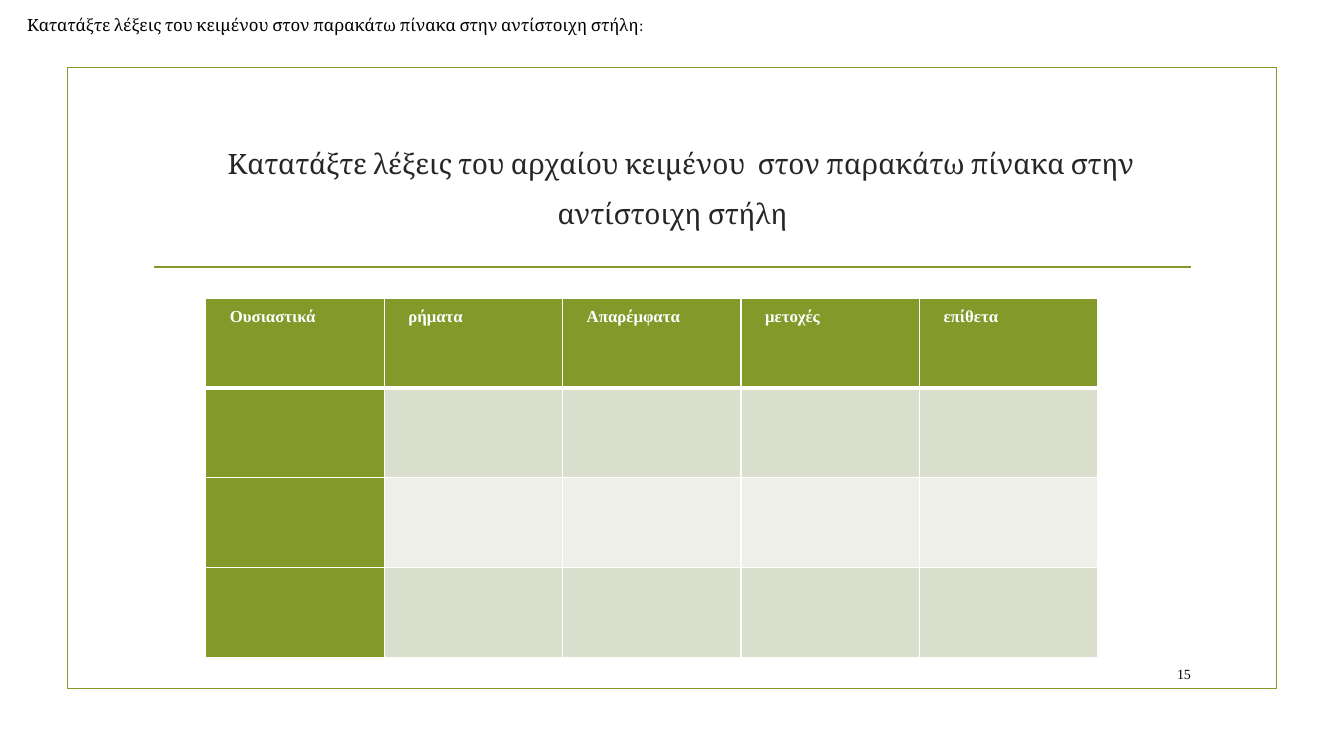
from lxml.etree import SubElement
from pptx import Presentation
from pptx.dml.color import RGBColor
from pptx.enum.shapes import MSO_CONNECTOR, MSO_SHAPE
from pptx.enum.text import MSO_ANCHOR, PP_ALIGN
from pptx.oxml.ns import qn
from pptx.util import Inches, Pt

TITLE = "Κατατάξτε λέξεις του αρχαίου κειμένου  στον παρακάτω πίνακα στην αντίστοιχη στήλη"
INSTRUCTION = "Κατατάξτε λέξεις του κειμένου στον παρακάτω πίνακα στην αντίστοιχη στήλη:"
HEADINGS = ["Ουσιαστικά", "ρήματα", "Απαρέμφατα ", "μετοχές", "επίθετα"]
SLIDE_NUMBER = "15"
ROW_COUNT = 4

OLIVE = RGBColor(0x83, 0x99, 0x2A)
BANDS = [RGBColor(0xED, 0xEF, 0xE8), RGBColor(0xD9, 0xDE, 0xCD)]
WHITE = RGBColor(0xFF, 0xFF, 0xFF)
BLACK = RGBColor(0, 0, 0)
CHARCOAL = RGBColor(0x26, 0x26, 0x26)

SLIDE_WIDTH, SLIDE_HEIGHT = 13.33, 7.5
MARGIN = 0.67
TABLE_LEFT, TABLE_TOP = 2.04, 2.96
COLUMN_WIDTH, ROW_HEIGHT = 1.77, 0.89
RULE_LEFT, RULE_RIGHT, RULE_TOP = 1.53, 11.81, 2.65


def write(frame, text, size, color, font="Cambria", align=PP_ALIGN.JUSTIFY,
          bold=False, indent=0.17, spacing=1.0, anchor=MSO_ANCHOR.MIDDLE):
    frame.word_wrap = True
    frame.vertical_anchor = anchor
    paragraph = frame.paragraphs[0]
    paragraph.alignment = align
    paragraph.line_spacing = spacing
    paragraph.space_before = Pt(0)
    properties = paragraph._p.get_or_add_pPr()
    properties.set("marL", "0")
    properties.set("indent", str(Inches(indent)))
    run = paragraph.add_run()
    run.text = text
    run.font.name = font
    run.font.size = Pt(size)
    run.font.bold = bold
    run.font.color.rgb = color


def add_border(cell, side, points):
    border = SubElement(cell._tc.get_or_add_tcPr(), qn(f"a:ln{side}"), w=str(Pt(points)))
    fill = SubElement(border, qn("a:solidFill"))
    SubElement(fill, qn("a:srgbClr"), val=str(WHITE))


def add_frame_and_rule(slide):
    frame = slide.shapes.add_shape(
        MSO_SHAPE.RECTANGLE, Inches(MARGIN), Inches(MARGIN),
        Inches(SLIDE_WIDTH - 2 * MARGIN), Inches(SLIDE_HEIGHT - 2 * MARGIN))
    frame.shadow.inherit = False
    frame.fill.background()
    rule = slide.shapes.add_connector(
        MSO_CONNECTOR.STRAIGHT, Inches(RULE_LEFT), Inches(RULE_TOP),
        Inches(RULE_RIGHT), Inches(RULE_TOP))
    SubElement(rule._element.spPr, qn("a:effectLst"))
    for shape in (frame, rule):
        shape.line.color.rgb = OLIVE
        shape.line.width = Pt(1.25)


def add_word_table(slide):
    table = slide.shapes.add_table(
        ROW_COUNT, len(HEADINGS), Inches(TABLE_LEFT), Inches(TABLE_TOP),
        Inches(COLUMN_WIDTH * len(HEADINGS)), Inches(ROW_HEIGHT * ROW_COUNT)).table
    table.first_col = True
    for column in table.columns:
        column.width = Inches(COLUMN_WIDTH)
    for row_index, row in enumerate(table.rows):
        row.height = Inches(ROW_HEIGHT)
        for column_index, cell in enumerate(row.cells):
            is_heading = row_index == 0
            cell.margin_left = cell.margin_right = Inches(0.07)
            cell.margin_top = cell.margin_bottom = 0
            add_border(cell, "L", 1)
            add_border(cell, "R", 1)
            add_border(cell, "T", 3 if row_index == 1 else 1)
            add_border(cell, "B", 3 if is_heading else 1)
            cell.fill.solid()
            on_edge = is_heading or column_index == 0
            cell.fill.fore_color.rgb = OLIVE if on_edge else BANDS[row_index % 2]
            if is_heading:
                write(cell.text_frame, HEADINGS[column_index], 12, WHITE,
                      font="Times New Roman", bold=True, spacing=1.5,
                      anchor=MSO_ANCHOR.TOP)


def add_text(slide, text, left, top, width, height, **style):
    box = slide.shapes.add_textbox(Inches(left), Inches(top), Inches(width), Inches(height))
    write(box.text_frame, text, **style)


def main():
    presentation = Presentation()
    presentation.slide_width = Inches(SLIDE_WIDTH)
    presentation.slide_height = Inches(SLIDE_HEIGHT)
    slide = presentation.slides.add_slide(presentation.slide_layouts[5])

    title = slide.shapes.title
    title.left, title.top = Inches(1.42), Inches(1.07)
    title.width, title.height = Inches(10.5), Inches(1.43)
    write(title.text_frame, TITLE, 20, CHARCOAL, align=PP_ALIGN.CENTER, spacing=1.5)

    add_frame_and_rule(slide)
    add_word_table(slide)
    add_text(slide, INSTRUCTION, 0, 0, SLIDE_WIDTH, 0.5, size=12, color=BLACK)
    add_text(slide, SLIDE_NUMBER, 11.32, 6.53, 0.59, 0.31, size=10, color=BLACK,
             font="Times New Roman", align=PP_ALIGN.RIGHT, indent=0)
    presentation.save("out.pptx")


if __name__ == "__main__":
    main()
